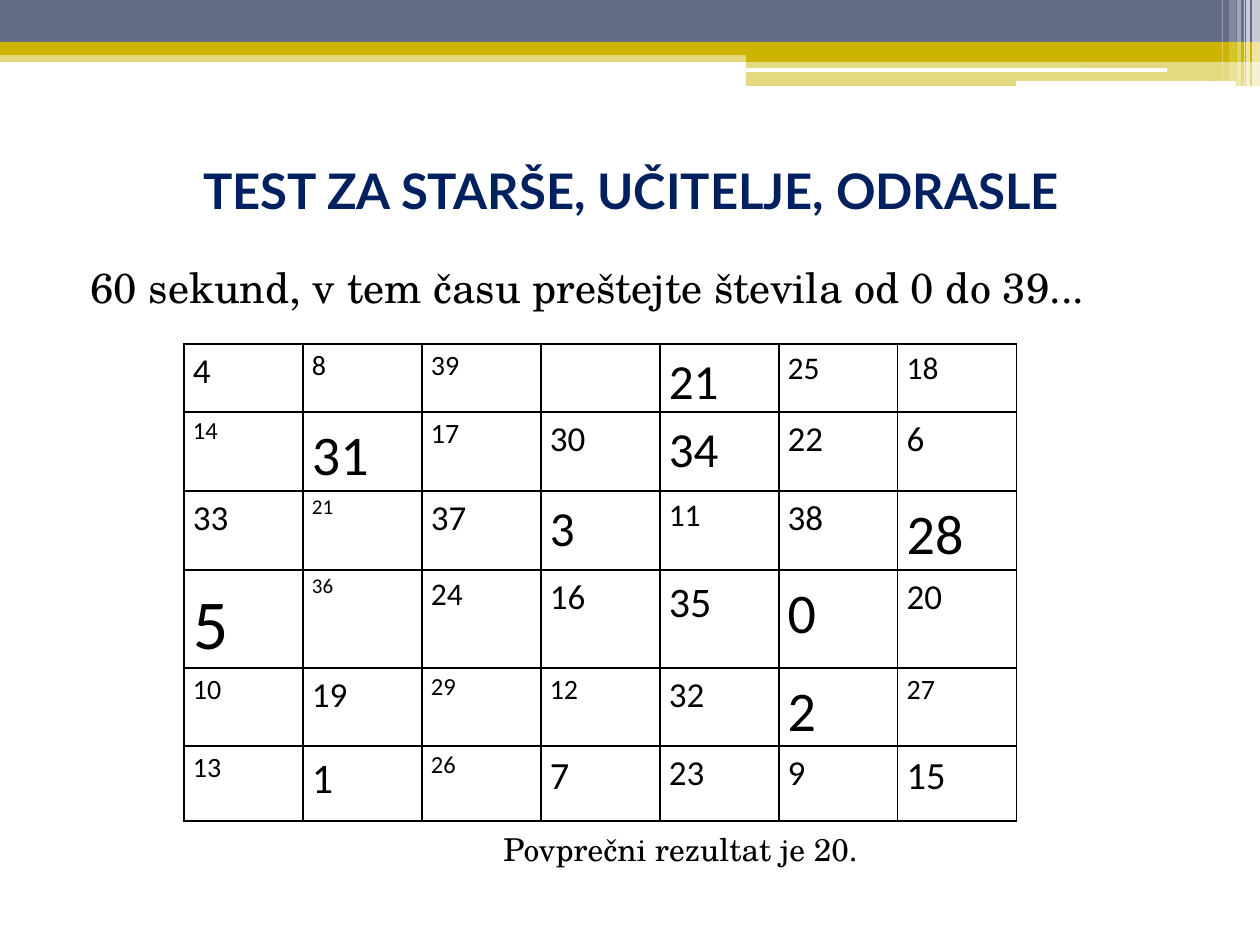
from lxml.etree import SubElement
from pptx import Presentation
from pptx.dml.color import RGBColor
from pptx.enum.shapes import MSO_SHAPE
from pptx.enum.text import MSO_ANCHOR, PP_ALIGN
from pptx.oxml.ns import qn
from pptx.util import Emu, Pt

PX = 914400 / 126
WHITE = RGBColor(0xFF, 0xFF, 0xFF)
BLACK = RGBColor(0, 0, 0)
SLATE = RGBColor(0x64, 0x6B, 0x86)
GOLD = RGBColor(0xCC, 0xB4, 0x00)
NAVY = RGBColor(0x00, 0x20, 0x60)

SERIF = "TeX Gyre Schola"

# left, top, width, height, colour, opacity in percent
BANDS = [
    (0, 50, 1260, 12, GOLD, 50),
    (0, 0, 1260, 42, SLATE, 100),
    (0, 42, 1260, 13, GOLD, 100),
    (746, 49, 514, 13, GOLD, 100),
    (746, 61, 514, 25, GOLD, 50),
]
GAPS = [(745, 68, 422, 4), (1016, 81, 220, 5)]
# left, width, height, opacity in percent
STRIPES = [
    (1252, 8, 86, 65), (1246, 4, 86, 65), (1244, 1, 86, 60),
    (1237, 4, 86, 40), (1229, 7, 81, 20), (1222, 1, 81, 30),
]

ROW_HEIGHTS = [68, 79, 79, 98, 78, 75]
# number, size in points
NUMBERS = [
    [("4", 20), ("8", 16), ("39", 16), ("", 18), ("21", 28), ("25", 18), ("18", 18)],
    [("14", 14), ("31", 32), ("17", 16), ("30", 20), ("34", 28), ("22", 20), ("6", 20)],
    [("33", 20), ("21", 12), ("37", 20), ("3", 28), ("11", 18), ("38", 20), ("28", 32)],
    [("5", 40), ("36", 12), ("24", 18), ("16", 20), ("35", 24), ("0", 32), ("20", 20)],
    [("10", 16), ("19", 20), ("29", 14), ("12", 16), ("32", 20), ("2", 32), ("27", 16)],
    [("13", 16), ("1", 24), ("26", 14), ("7", 22), ("23", 20), ("9", 20), ("15", 22)],
]


def px(*lengths):
    return [Emu(round(n * PX)) for n in lengths]


def write(tf, text, size, font="Calibri", color=BLACK, bold=False,
          align=PP_ALIGN.LEFT, spacing=None, before=0):
    p = tf.paragraphs[0]
    p.alignment = align
    p.line_spacing = spacing
    p.space_before = Pt(before)
    p.font.size = Pt(size)
    if text:
        r = p.add_run()
        r.text = text
        r.font.size = Pt(size)
        r.font.name = font
        r.font.bold = bold
        r.font.color.rgb = color


def add_borders(cell, color=BLACK, width=1):
    tcPr = cell._tc.get_or_add_tcPr()
    for i, side in enumerate(("lnL", "lnR", "lnT", "lnB")):
        ln = tcPr.makeelement(qn(f"a:{side}"), {"w": str(Pt(width))})
        fill = SubElement(ln, qn("a:solidFill"))
        SubElement(fill, qn("a:srgbClr"), val=str(color))
        tcPr.insert(i, ln)  # borders come before the cell fill


class Deck:
    def __init__(self):
        self.prs = Presentation()
        self.prs.slide_width, self.prs.slide_height = px(1260, 945)
        self.s = self.prs.slides.add_slide(self.prs.slide_layouts[6])

    def block(self, x, y, w, h, color, opacity=100, kind=MSO_SHAPE.RECTANGLE):
        sp = self.s.shapes.add_shape(kind, *px(x, y, w, h))
        sp.shadow.inherit = False
        sp.line.fill.background()
        sp.fill.solid()
        sp.fill.fore_color.rgb = color
        if opacity < 100:
            clr = sp._element.spPr.find(qn("a:solidFill"))[0]
            SubElement(clr, qn("a:alpha"), val=str(opacity * 1000))

    def text(self, x, y, w, h, text, size, anchor=MSO_ANCHOR.TOP, **fmt):
        tf = self.s.shapes.add_textbox(*px(x, y, w, h)).text_frame
        tf.word_wrap = True
        tf.vertical_anchor = anchor
        write(tf, text, size, **fmt)

    def table(self, x, y, col_width, row_heights, rows):
        cols = len(rows[0])
        frame = self.s.shapes.add_table(
            len(rows), cols, *px(x, y, col_width * cols, sum(row_heights)))
        table = frame.table
        table.first_row = table.horz_banding = False
        for col in table.columns:
            col.width = px(col_width)[0]
        for i, (height, row) in enumerate(zip(row_heights, rows)):
            table.rows[i].height = px(height)[0]
            for j, (number, size) in enumerate(row):
                cell = table.cell(i, j)
                cell.margin_left, cell.margin_right = px(9, 9)
                cell.margin_top = cell.margin_bottom = 0
                cell.fill.background()
                add_borders(cell)
                write(cell.text_frame, number, size, spacing=1.15)


def main():
    deck = Deck()
    for band in BANDS:
        deck.block(*band)
    for gap in GAPS:
        deck.block(*gap, WHITE, kind=MSO_SHAPE.ROUNDED_RECTANGLE)
    for x, w, h, opacity in STRIPES:
        deck.block(x, 0, w, h, WHITE, opacity)

    deck.text(64, 116, 1134, 147, "TEST ZA STARŠE, UČITELJE, ODRASLE", 28,
              anchor=MSO_ANCHOR.MIDDLE, font="Lato", color=NAVY, bold=True,
              align=PP_ALIGN.CENTER)
    deck.text(78, 255, 1119, 66,
              "60 sekund, v tem času preštejte števila od 0 do 39...", 24,
              font=SERIF, before=3)
    deck.table(184, 344, 119, ROW_HEIGHTS, NUMBERS)
    deck.text(491, 824, 706, 50, "Povprečni rezultat je 20.", 18, font=SERIF)
    deck.prs.save("out.pptx")


if __name__ == "__main__":
    main()
